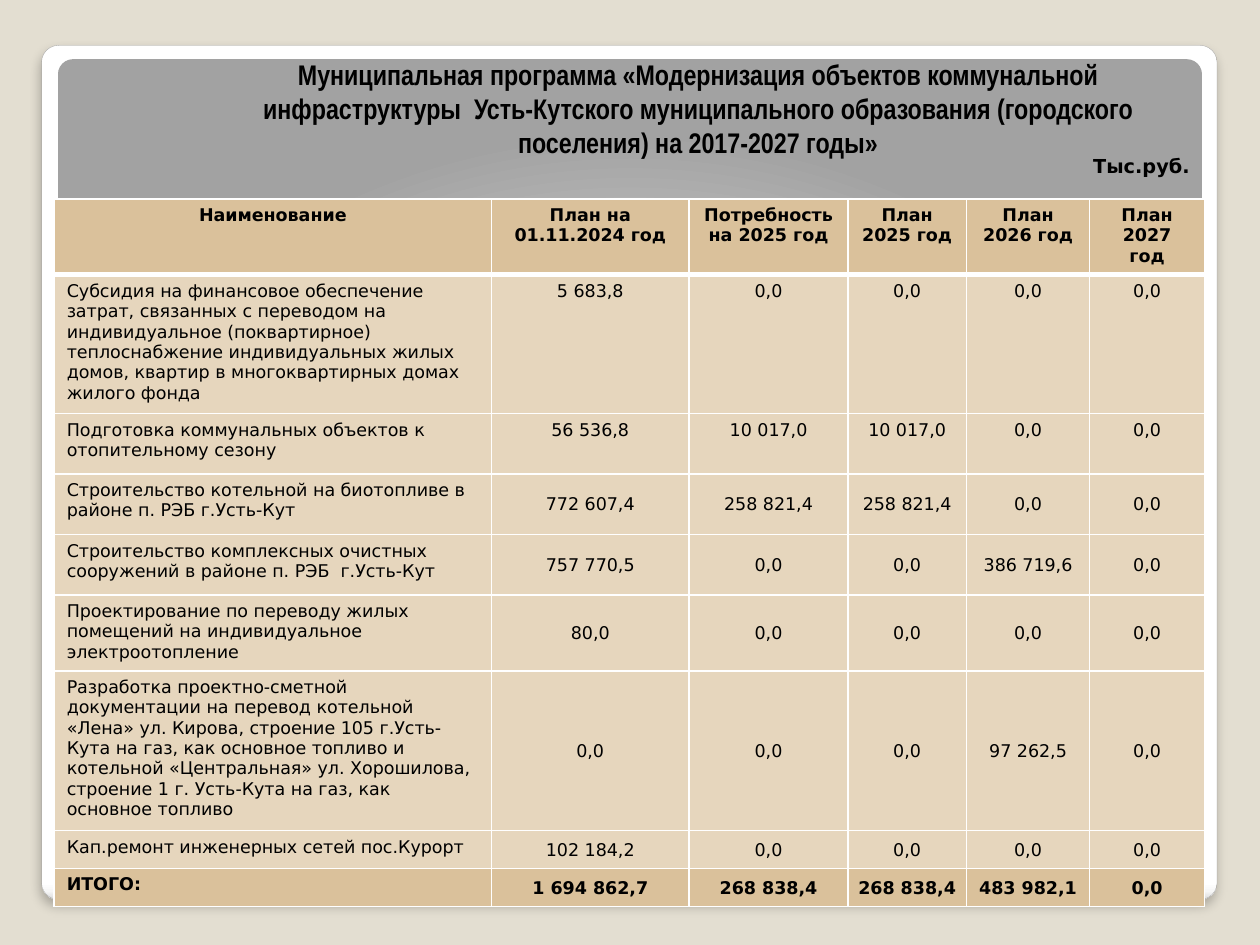
from lxml.etree import SubElement
from pptx import Presentation
from pptx.dml.color import RGBColor
from pptx.enum.shapes import MSO_SHAPE as SHAPE
from pptx.enum.text import MSO_ANCHOR as ANCHOR, PP_ALIGN as ALIGN
from pptx.oxml import parse_xml
from pptx.oxml.ns import nsdecls, qn
from pptx.util import Inches, Pt

TITLE = ("Муниципальная программа «Модернизация объектов коммунальной "
         "инфраструктуры  Усть-Кутского муниципального образования "
         "(городского поселения) на 2017-2027 годы»")
HEADER = ["Наименование", "План на 01.11.2024 год", "Потребность\nна 2025 год",
          "План\n2025 год", "План\n2026 год", "План\n2027 год"]
ROWS = [
    ["Субсидия на финансовое обеспечение затрат, связанных с переводом на "
     "индивидуальное (поквартирное) теплоснабжение индивидуальных жилых домов, "
     "квартир в многоквартирных домах жилого фонда",
     "5 683,8", "0,0", "0,0", "0,0", "0,0"],
    ["Подготовка коммунальных объектов к отопительному сезону",
     "56 536,8", "10 017,0", "10 017,0", "0,0", "0,0"],
    ["Строительство котельной на биотопливе в районе п. РЭБ г.Усть-Кут",
     "772 607,4", "258 821,4", "258 821,4", "0,0", "0,0"],
    ["Строительство комплексных очистных сооружений в районе п. РЭБ  г.Усть-Кут",
     "757 770,5", "0,0", "0,0", "386 719,6", "0,0"],
    ["Проектирование по переводу жилых помещений на индивидуальное "
     "электроотопление", "80,0", "0,0", "0,0", "0,0", "0,0"],
    ["Разработка проектно-сметной документации на перевод котельной «Лена» "
     "ул. Кирова, строение 105 г.Усть-Кута на газ, как основное топливо и "
     "котельной «Центральная» ул. Хорошилова, строение 1 г. Усть-Кута на газ, "
     "как основное топливо", "0,0", "0,0", "0,0", "97 262,5", "0,0"],
    ["Кап.ремонт инженерных сетей пос.Курорт",
     "102 184,2", "0,0", "0,0", "0,0", "0,0"],
    ["ИТОГО:", "1 694 862,7", "268 838,4", "268 838,4", "483 982,1", "0,0"],
]
COL_WIDTHS = [3.47, 1.57, 1.26, 0.94, 0.98, 0.91]
ROW_HEIGHTS = [0.48, 0.87, 0.48, 0.48, 0.48, 0.48, 1.04, 0.3, 0.3]
FIRST_MIDDLE_ROW = 3


def color(value):
    return RGBColor.from_string(value)


def set_gradient(s, stops, direction):
    xml = "".join(f'<a:gs pos="{pos * 1000}"><a:srgbClr val="{c}"/></a:gs>'
                  for pos, c in stops)
    s.fill.background()
    old = s._element.spPr.find(qn("a:noFill"))
    old.getparent().replace(old, parse_xml(
        f'<a:gradFill {nsdecls("a")} rotWithShape="1">'
        f'<a:gsLst>{xml}</a:gsLst>{direction}</a:gradFill>'))


def add_panel(slide, box, stops, direction):
    s = slide.shapes.add_shape(SHAPE.ROUNDED_RECTANGLE, *map(Inches, box))
    s.adjustments[0] = 0.02
    s.shadow.inherit = False
    s.line.fill.background()
    set_gradient(s, stops, direction)
    return s


def add_card(slide, box):
    s = add_panel(slide, box,
                  [(0, "FFFFFF"), (98, "FFFFFF"), (99, "F7F7F7"), (100, "DADADA")],
                  '<a:lin ang="5400000" scaled="0"/>')
    s.line.color.rgb = color("A4A4A4")
    s.line.width = Pt(0.16)
    effects = s._element.spPr.find(qn("a:effectLst"))
    effects.append(parse_xml(
        f'<a:outerShdw {nsdecls("a")} blurRad="{Pt(6)}" dist="{Pt(4)}" '
        'dir="5400000" algn="t" rotWithShape="0">'
        '<a:srgbClr val="000000"><a:alpha val="25000"/></a:srgbClr></a:outerShdw>'))


def add_banner(slide, box):
    add_panel(slide, box, [(0, "FFFFFF"), (55, "E1E1E1"), (100, "A2A2A2")],
              '<a:path path="circle"><a:fillToRect l="50000" t="175000" '
              'r="50000" b="-75000"/></a:path>')


def write(tf, text, size, font, bold, align):
    tf.text = text
    for p in tf.paragraphs:
        p.alignment = align
        p.font.size = Pt(size)
        p.font.name = font
        p.font.bold = bold
        p.font.color.rgb = color("000000")


def add_label(slide, box, text, size, font, anchor):
    tf = slide.shapes.add_textbox(*map(Inches, box)).text_frame
    tf.word_wrap = True
    tf.vertical_anchor = anchor
    write(tf, text, size, font, True, ALIGN.CENTER)


def set_borders(cell, widths):
    tc_pr = cell._tc.get_or_add_tcPr()
    for side, width in zip("LRTB", widths):
        ln = SubElement(tc_pr, qn(f"a:ln{side}"), w=str(Pt(width)))
        fill = SubElement(ln, qn("a:solidFill"))
        SubElement(fill, qn("a:srgbClr"), val="FFFFFF")


def add_budget_table(slide, box):
    data = [HEADER] + ROWS
    frame = slide.shapes.add_table(len(data), len(HEADER), *map(Inches, box))
    table = frame.table
    table.horz_banding = False
    for col, width in zip(table.columns, COL_WIDTHS):
        col.width = Inches(width)
    for row, height in zip(table.rows, ROW_HEIGHTS):
        row.height = Inches(height)
    frame.height = Inches(box[3])
    for i, values in enumerate(data):
        strong = i in (0, len(data) - 1)
        for j, value in enumerate(values):
            cell = table.cell(i, j)
            set_borders(cell, [1, 1, 3 if i == 1 else 1, 3 if i == 0 else 1])
            cell.fill.solid()
            cell.fill.fore_color.rgb = color("DAC19B" if strong else "E6D6BD")
            if j and i >= FIRST_MIDDLE_ROW:
                cell.vertical_anchor = ANCHOR.MIDDLE
                cell.margin_left = cell.margin_right = cell.margin_top = Inches(0.01)
                cell.margin_bottom = 0
            align = ALIGN.LEFT if i and not j else ALIGN.CENTER
            write(cell.text_frame, value, 10, "DejaVu Sans", strong, align)


def main():
    prs = Presentation()
    prs.slide_width, prs.slide_height = Inches(10), Inches(7.5)
    slide = prs.slides.add_slide(prs.slide_layouts[6])
    slide.background.fill.solid()
    slide.background.fill.fore_color.rgb = color("E3DED1")
    add_card(slide, (0.33, 0.36, 9.33, 6.78))
    add_banner(slide, (0.46, 0.47, 9.08, 6))
    add_label(slide, (1.52, 0.44, 8.04, 0.87), TITLE, 16.2, "Arial Narrow",
              ANCHOR.BOTTOM)
    add_budget_table(slide, (0.43, 1.58, 9.13, 5.33))
    add_label(slide, (8.56, 1.19, 1, 0.25), "Тыс.руб.", 11, "DejaVu Sans",
              ANCHOR.MIDDLE)
    prs.save("out.pptx")


if __name__ == "__main__":
    main()
